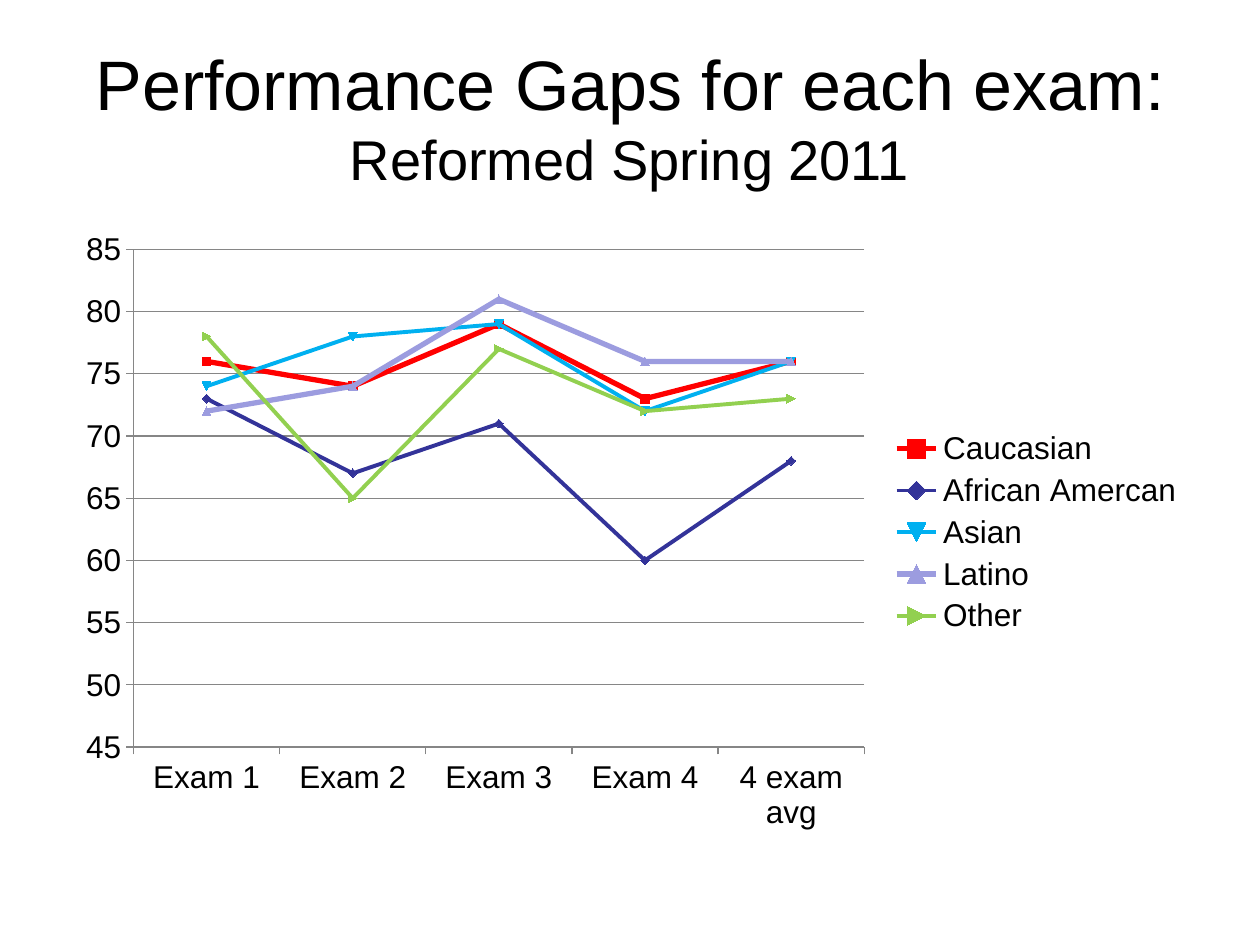
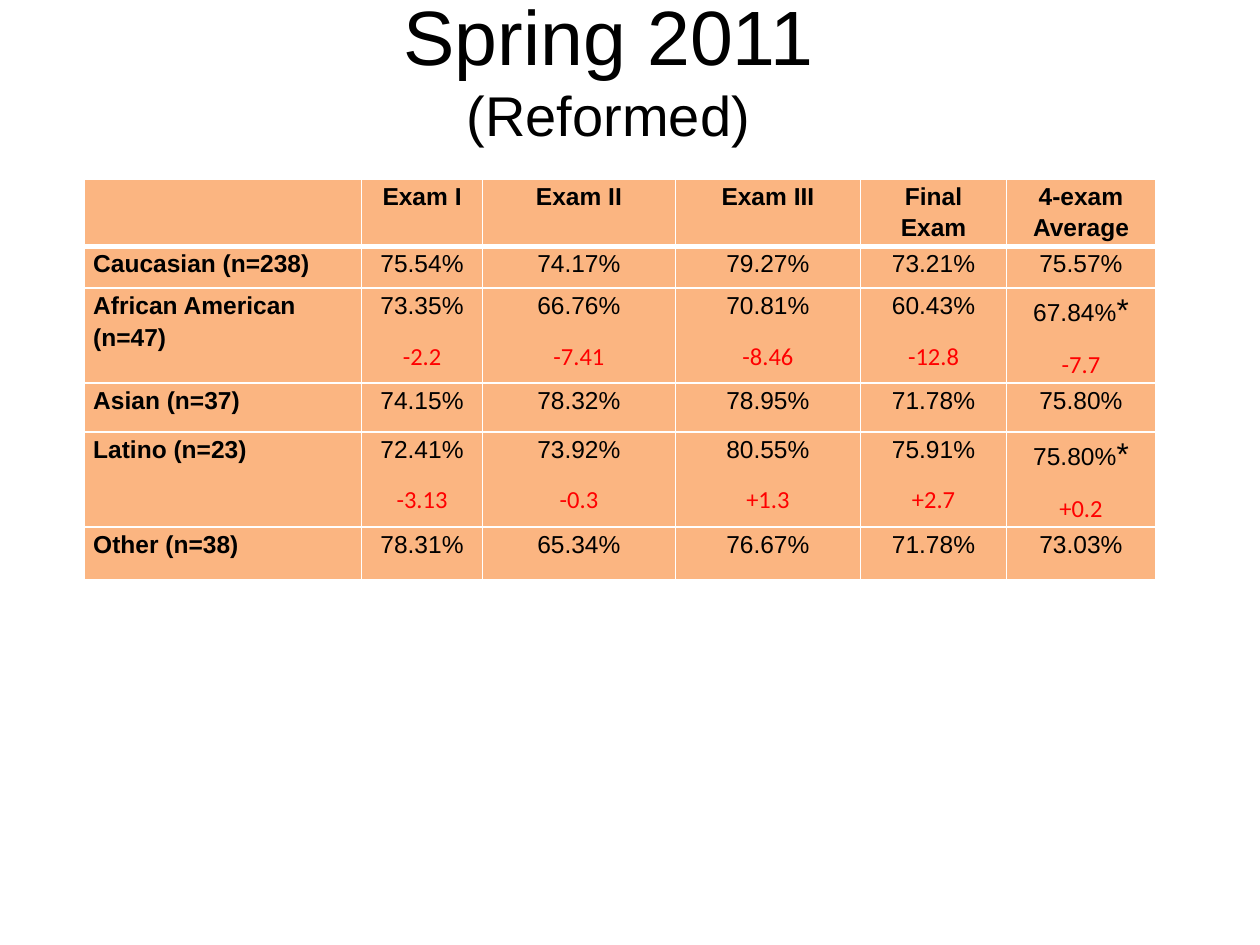
"""Build two slides on exam performance gaps: a line chart and a score table."""
from lxml.etree import SubElement
from pptx import Presentation
from pptx.chart.data import CategoryChartData
from pptx.dml.color import RGBColor
from pptx.enum.chart import XL_CHART_TYPE, XL_LEGEND_POSITION
from pptx.enum.text import MSO_ANCHOR, PP_ALIGN
from pptx.oxml import parse_xml
from pptx.oxml.ns import nsdecls, qn
from pptx.util import Inches, Pt

BLACK = RGBColor(0x00, 0x00, 0x00)
RED = RGBColor(0xFF, 0x00, 0x00)
NAVY = RGBColor(0x33, 0x33, 0x99)
SKY = RGBColor(0x00, 0xB0, 0xF0)
LAVENDER = RGBColor(0x9C, 0x9C, 0xDF)
GREEN = RGBColor(0x92, 0xD0, 0x50)
GRAY = RGBColor(0x86, 0x86, 0x86)
PEACH = RGBColor(0xFB, 0xB5, 0x81)

SCORES = {
    "Caucasian": [75.54, 74.17, 79.27, 73.21, 75.57],
    "African American": [73.35, 66.76, 70.81, 60.43, 67.84],
    "Asian": [74.15, 78.32, 78.95, 71.78, 75.80],
    "Latino": [72.41, 73.92, 80.55, 75.91, 75.80],
    "Other": [78.31, 65.34, 76.67, 71.78, 73.03],
}
COUNTS = [238, 47, 37, 23, 38]
GAPS = {
    "African American": ["-2.2", "-7.41", "-8.46", "-12.8", "-7.7"],
    "Latino": ["-3.13", "-0.3", "+1.3", "+2.7", "+0.2"],
}


def add_text(paragraph, text, size, color=BLACK, **formats):
    run = paragraph.add_run()
    run.text = text
    run.font.color.rgb = color
    for name, value in {"name": "Arial", "size": Pt(size), **formats}.items():
        setattr(run.font, name, value)


def add_title(slide, left, top, height, heading, heading_size, subheading):
    frame = slide.shapes.add_textbox(
        Inches(left), Inches(top), Inches(9), Inches(height)).text_frame
    frame.word_wrap = True
    frame.vertical_anchor = MSO_ANCHOR.MIDDLE
    paragraph = frame.paragraphs[0]
    paragraph.alignment = PP_ALIGN.CENTER
    add_text(paragraph, heading, heading_size)
    paragraph.add_line_break()
    add_text(paragraph, subheading, 32)


presentation = Presentation()
presentation.slide_width = Inches(10)
presentation.slide_height = Inches(7.5)
blank = presentation.slide_layouts[6]

gaps_slide = presentation.slides.add_slide(blank)
add_title(gaps_slide, 0.5, 0.3, 1.25,
          "Performance Gaps for each exam:", 40, "Reformed Spring 2011")

chart_width, chart_height = 9, 4.95
exam_data = CategoryChartData()
exam_data.categories = ["Exam 1", "Exam 2", "Exam 3", "Exam 4", "4 exam avg"]
for group, scores in SCORES.items():
    exam_data.add_series(group.replace("American", "Amercan"),
                         [round(score) for score in scores])
chart = gaps_slide.shapes.add_chart(
    XL_CHART_TYPE.LINE_MARKERS, Inches(0.5), Inches(1.75),
    Inches(chart_width), Inches(chart_height), exam_data).chart
chart.has_title = False
chart.font.color.rgb = BLACK
for name, value in {"name": "Arial", "size": Pt(18)}.items():
    setattr(chart.font, name, value)
chart.has_legend = True
chart.legend.position = XL_LEGEND_POSITION.RIGHT
chart.legend.include_in_layout = False

score_axis = chart.value_axis
for name, value in {"minimum_scale": 45, "maximum_scale": 85,
                    "major_unit": 5, "has_major_gridlines": True}.items():
    setattr(score_axis, name, value)
for line in (score_axis.format.line, chart.category_axis.format.line,
             score_axis.major_gridlines.format.line):
    line.color.rgb = GRAY
    line.width = Pt(0.75)

chart.plots[0].vary_by_categories = False
group_colors = [RED, NAVY, SKY, LAVENDER, GREEN]
for series, color in zip(chart.plots[0].series, group_colors):
    series.smooth = False
    series.format.line.color.rgb = color
    if color in (RED, LAVENDER):
        series.format.line.width = Pt(3)
    series.marker.size = 5
    series.marker.format.fill.solid()
    series.marker.format.fill.fore_color.rgb = color
    series.marker.format.line.color.rgb = color

plot_area = chart.plots[0]._element.getparent()
for old_layout in plot_area.findall(qn("c:layout")):
    plot_area.remove(old_layout)
layout = parse_xml(f"<c:layout {nsdecls('c')}/>")
manual = SubElement(layout, qn("c:manualLayout"))
for tag, value in {"layoutTarget": "inner", "xMode": "edge", "yMode": "edge",
                   "x": 0.56 / chart_width, "y": 0.23 / chart_height,
                   "w": 5.8 / chart_width, "h": 3.95 / chart_height}.items():
    SubElement(manual, qn(f"c:{tag}"), val=str(value))
plot_area.insert(0, layout)

scores_slide = presentation.slides.add_slide(blank)
add_title(scores_slide, 0.33, 0.08, 0.92, "Spring 2011", 44, "(Reformed)")

column_widths = [2.2, 0.96, 1.53, 1.47, 1.16, 1.18]
row_heights = [0.53, 0.33, 0.74, 0.39, 0.74, 0.42]
table = scores_slide.shapes.add_table(
    len(row_heights), len(column_widths), Inches(0.67), Inches(1.42),
    Inches(8.5), Inches(3.17)).table
for column, width in zip(table.columns, column_widths):
    column.width = Inches(width)
for row, height in zip(table.rows, row_heights):
    row.height = Inches(height)

headings = ["", "Exam I", "Exam II", "Exam III", "Final Exam", "4-exam Average"]
rows = [headings] + [
    [f"{group} (n={count})"] + [f"{score:.2f}%" for score in scores]
    for (group, scores), count in zip(SCORES.items(), COUNTS)]
row_gaps = [None] + [GAPS.get(group) for group in SCORES]

for row_index, (texts, gaps) in enumerate(zip(rows, row_gaps)):
    for column_index, text in enumerate(texts):
        is_header = row_index == 0
        is_label = column_index == 0
        cell = table.cell(row_index, column_index)
        for name, value in {"margin_left": Inches(0.07), "margin_top": 0,
                            "margin_right": Inches(0.07),
                            "margin_bottom": 0}.items():
            setattr(cell, name, value)
        cell.fill.solid()
        cell.fill.fore_color.rgb = PEACH
        for position, side in enumerate("LRTB" if is_header else ""):
            cell._tc.tcPr.insert(position, parse_xml(
                f'<a:ln{side} {nsdecls("a")} w="{Pt(3 if side == "B" else 1)}">'
                '<a:solidFill><a:srgbClr val="FFFFFF"/></a:solidFill>'
                f'</a:ln{side}>'))

        frame = cell.text_frame
        if text:
            add_text(frame.paragraphs[0], text, 14, bold=is_label or is_header)
        if gaps and not is_label:
            if column_index == len(texts) - 1:
                add_text(frame.paragraphs[0], "*", 18, bold=False)
            add_text(frame.add_paragraph(), gaps[column_index - 1], 14, RED,
                     name="Calibri", bold=False)
        for paragraph in frame.paragraphs:
            alignment = PP_ALIGN.LEFT if is_label else PP_ALIGN.CENTER
            for name, value in {"alignment": alignment, "line_spacing": 1.15,
                                "space_after": Pt(10)}.items():
                setattr(paragraph, name, value)

presentation.save("out.pptx")
